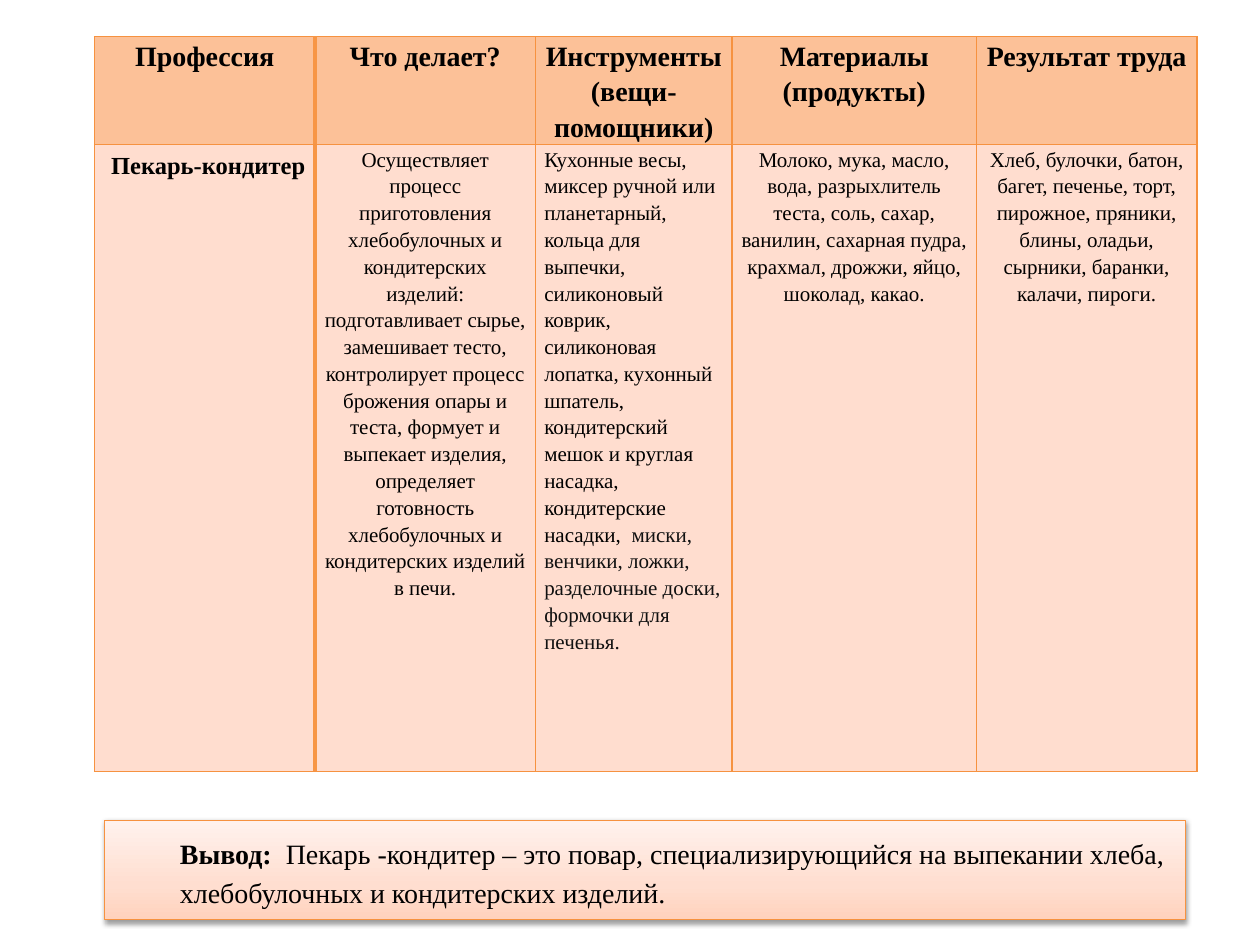
"""Builds a slide describing the pastry baker's profession: a table and a conclusion."""
from copy import deepcopy

from lxml import etree
from pptx import Presentation
from pptx import util as u
from pptx.dml.color import RGBColor
from pptx.enum import shapes, text
from pptx.oxml import parse_xml
from pptx.oxml.ns import nsdecls, qn

THEME = {
    "border": "F69240", "divider": "F79646", "header": "FCC198", "body": "FFDDCF",
    "gradient": [(0, "FFD2BD"), (0.35, "FFDED0"), (1, "FFF2ED")],
    "thin": 0.75, "thick": 2,
    "heading": {"size": u.Pt(16), "bold": True, "ink": "000000"},
    "profession": {"size": u.Pt(14), "bold": True, "ink": "000000"},
    "detail": {"size": u.Pt(12), "bold": False, "ink": "000000"},
    "soft": {"size": u.Pt(12), "bold": False, "ink": "111111"},
    "conclusion": {"size": u.Pt(16), "bold": False, "ink": "000000"},
}
CENTER, LEFT = text.PP_ALIGN.CENTER, text.PP_ALIGN.LEFT


def write(frame, paragraphs, align):
    for index, pieces in enumerate(paragraphs):
        line = frame.add_paragraph() if index else frame.paragraphs[0]
        line.alignment, line.line_spacing = align, 1.15
        for wording, style in pieces:
            run = line.add_run()
            run.text = wording
            run.font.name = "Times New Roman"
            for key, value in THEME[style].items():
                if key == "ink":
                    run.font.color.rgb = RGBColor.from_string(value)
                else:
                    setattr(run.font, key, value)


def add_border(cell, side, color, width):
    edge = etree.SubElement(cell._tc.get_or_add_tcPr(), qn(f"a:ln{side}"), w=str(u.Pt(width)))
    solid = etree.SubElement(edge, qn("a:solidFill"))
    etree.SubElement(solid, qn("a:srgbClr"), val=color)


headings = [["Профессия"], ["Что делает?"], ["Инструменты", "(вещи-помощники)"],
            ["Материалы", "(продукты)"], ["Результат труда"]]
details = [
    [(" ", "heading"), ("Пекарь-кондитер", "profession")],
    [("Осуществляет процесс приготовления хлебобулочных и кондитерских изделий: "
      "подготавливает сырье, замешивает тесто, контролирует процесс брожения опары и теста, "
      "формует и выпекает изделия, определяет готовность хлебобулочных и кондитерских "
      "изделий в печи.", "detail")],
    [("Кухонные весы, миксер ручной или планетарный, кольца для выпечки, силиконовый коврик, "
      "силиконовая лопатка, кухонный шпатель, кондитерский мешок и круглая насадка, "
      "кондитерские насадки, ", "detail"),
     (" миски, венчики, ложки, разделочные доски, формочки для печенья.", "soft")],
    [("Молоко, мука, масло, вода, разрыхлитель теста, соль, сахар, ванилин, сахарная пудра, "
      "крахмал, дрожжи, яйцо, шоколад, какао.", "detail")],
    [("Хлеб, булочки, батон, багет, печенье, торт, пирожное, пряники, блины, оладьи, "
      "сырники, баранки, калачи, пироги.", "detail")],
]
rows = [[[[(line, "heading")] for line in lines] for lines in headings],
        [[pieces] for pieces in details]]
column_widths, row_heights = [1.75, 1.75, 1.56, 1.94, 1.75], [0.86, 4.97]

deck = Presentation()
deck.slide_width, deck.slide_height = u.Inches(10), u.Inches(7.5)
slide = deck.slides.add_slide(deck.slide_layouts[6])

professions = slide.shapes.add_table(
    len(rows), len(column_widths), u.Inches(0.75), u.Inches(0.29),
    u.Inches(sum(column_widths)), u.Inches(sum(row_heights))).table
professions.horz_banding = False
for column, width in zip(professions.columns, column_widths):
    column.width = u.Inches(width)
for row, height in zip(professions.rows, row_heights):
    row.height = u.Inches(height)

cell_format = {"margin_left": u.Inches(0.07), "margin_right": u.Inches(0.07),
               "margin_top": 0, "margin_bottom": 0}
for r, (row, tint) in enumerate(zip(rows, ("header", "body"))):
    for c, paragraphs in enumerate(row):
        cell = professions.cell(r, c)
        for key, value in cell_format.items():
            setattr(cell, key, value)
        for side in "LRTB":
            divides = (c, side) in ((0, "R"), (1, "L"))
            add_border(cell, side, THEME["divider" if divides else "border"],
                       THEME["thick" if divides else "thin"])
        cell.fill.solid()
        cell.fill.fore_color.rgb = RGBColor.from_string(THEME[tint])
        write(cell.text_frame, paragraphs, LEFT if (r, c) == (1, 2) else CENTER)

conclusion = slide.shapes.add_shape(shapes.MSO_SHAPE.RECTANGLE, u.Inches(0.83), u.Inches(6.51),
                                    u.Inches(8.58), u.Inches(0.79))
conclusion.line.color.rgb = RGBColor.from_string(THEME["border"])
conclusion.line.width = u.Pt(THEME["thin"])
conclusion.fill.gradient()
conclusion.fill.gradient_angle = 90
stops = conclusion._element.spPr.find(qn("a:gradFill")).find(qn("a:gsLst"))
stops.append(deepcopy(stops[0]))
for stop, (position, color) in zip(conclusion.fill.gradient_stops, THEME["gradient"]):
    stop.position = position
    stop.color.rgb = RGBColor.from_string(color)
conclusion._element.spPr.append(parse_xml(
    f'<a:effectLst {nsdecls("a")}><a:outerShdw blurRad="{u.Pt(3.1)}" dist="{u.Pt(1.6)}" '
    'dir="5400000" rotWithShape="0"><a:srgbClr val="000000"><a:alpha val="38000"/></a:srgbClr>'
    '</a:outerShdw></a:effectLst>'))
conclusion.text_frame.word_wrap = True
conclusion.text_frame.vertical_anchor = text.MSO_ANCHOR.MIDDLE
write(conclusion.text_frame, [[
    ("Вывод:  ", "heading"),
    ("Пекарь -кондитер – это повар, специализирующийся на выпекании хлеба, "
     "хлебобулочных и кондитерских изделий.", "conclusion")]], LEFT)
conclusion.text_frame.paragraphs[0]._p.get_or_add_pPr().set("marL", str(u.Inches(0.5)))

deck.save("out.pptx")
